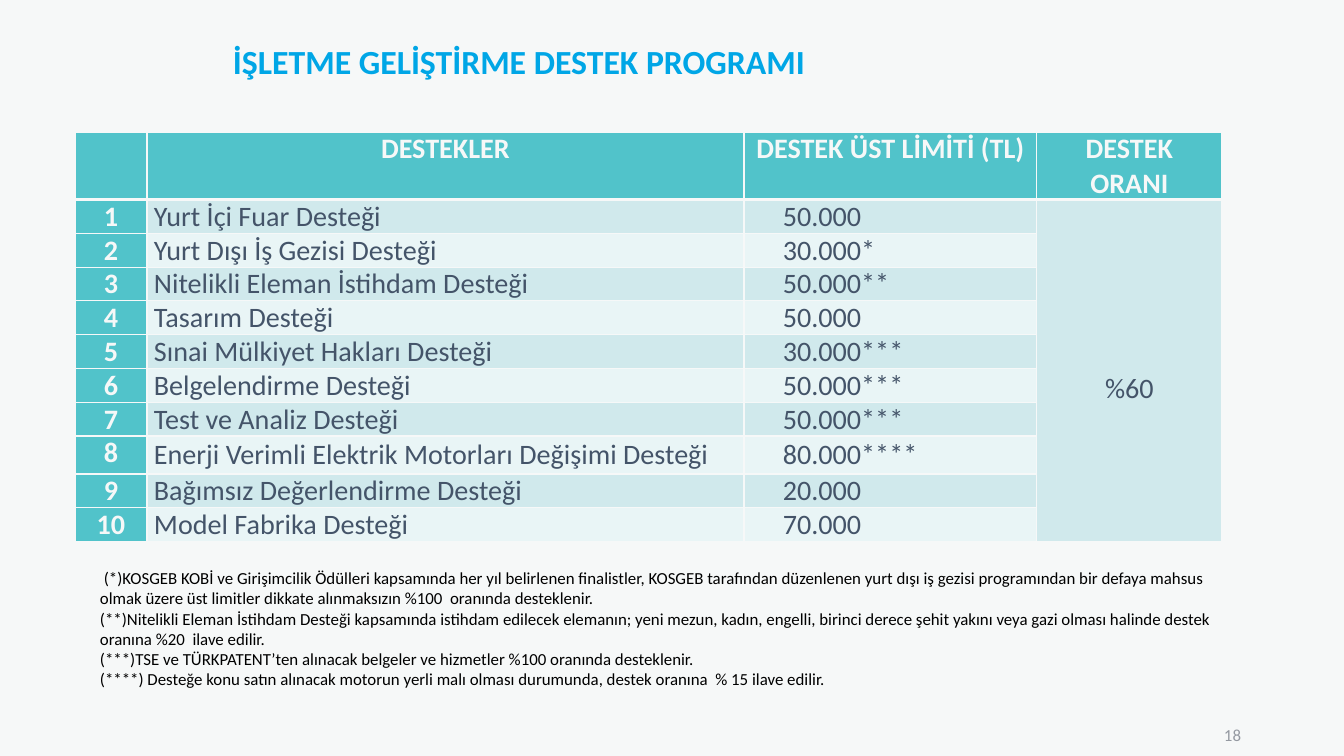
from dataclasses import dataclass

from lxml import etree
from pptx import Presentation
from pptx.dml.color import RGBColor
from pptx.enum.text import MSO_ANCHOR, PP_ALIGN
from pptx.oxml.ns import qn
from pptx.util import Pt

LEFT, CENTER, RIGHT = PP_ALIGN.LEFT, PP_ALIGN.CENTER, PP_ALIGN.RIGHT
TOP, MIDDLE = MSO_ANCHOR.TOP, MSO_ANCHOR.MIDDLE
EMU_PER_PX = 914400 / 101.2


def px(length):
    return round(length * EMU_PER_PX)


@dataclass(frozen=True)
class Theme:
    font: str = "Calibri"
    paper: str = "F6F8F8"
    accent: str = "51C3CA"
    band_dark: str = "D0E9EC"
    band_light: str = "E9F5F6"
    body: str = "445469"
    title: str = "00A6E6"
    note: str = "000000"
    page: str = "9499A1"
    title_size: int = 24
    table_size: int = 20
    note_size: int = 12
    grid_line: int = 1
    header_line: int = 3


class SlideBuilder:
    def __init__(self, slide, theme):
        self.slide = slide
        self.theme = theme
        background = slide.background.fill
        background.solid()
        background.fore_color.rgb = RGBColor.from_string(theme.paper)

    def add_lines(self, frame, lines, size, color, bold=False, align=LEFT, first_indent=0):
        for index, line in enumerate(lines):
            paragraph = frame.paragraphs[0] if index == 0 else frame.add_paragraph()
            paragraph.alignment = align
            if index == 0 and first_indent:
                paragraph._p.get_or_add_pPr().set("indent", str(px(first_indent)))
            run = paragraph.add_run()
            run.text = line
            run.font.name = self.theme.font
            run.font.size = Pt(size)
            run.font.bold = bold
            run.font.color.rgb = RGBColor.from_string(color)

    def text(self, box, lines, size, color, wrap=True, **style):
        frame = self.slide.shapes.add_textbox(*map(px, box)).text_frame
        frame.word_wrap = wrap
        frame.vertical_anchor = MIDDLE
        self.add_lines(frame, lines, size, color, **style)

    def borders(self, cell, **widths):
        """Draw the four sides of a cell; widths names the sides that are not a grid line."""
        properties = cell._tc.get_or_add_tcPr()
        for side in "LRTB":
            width = widths.get(side, self.theme.grid_line)
            line = etree.SubElement(properties, qn(f"a:ln{side}"), w=str(Pt(width)))
            fill = etree.SubElement(line, qn("a:solidFill"))
            etree.SubElement(fill, qn("a:srgbClr"), val=self.theme.paper)

    def table(self, left, top, columns, rows, height):
        frame = self.slide.shapes.add_table(
            len(rows), len(columns), px(left), px(top), px(sum(columns)), px(height))
        for column, width in zip(frame.table.columns, columns):
            column.width = px(width)
        for row, row_height in zip(frame.table.rows, rows):
            row.height = px(row_height)
        frame.height = px(height)
        return frame.table

    def cell(self, cell, lines, fill, color, anchor=TOP, indent=0, drop=0, edges=None, **style):
        cell.margin_left = px(7 + indent)
        cell.margin_right = px(7)
        cell.margin_top = px(drop)
        cell.margin_bottom = 0
        cell.vertical_anchor = anchor
        self.borders(cell, **(edges or {}))
        cell.fill.solid()
        cell.fill.fore_color.rgb = RGBColor.from_string(fill)
        self.add_lines(cell.text_frame, lines, self.theme.table_size, color, **style)


TITLE = "İŞLETME GELİŞTİRME DESTEK PROGRAMI"
HEADINGS = [[], ["DESTEKLER"], ["DESTEK ÜST LİMİTİ (TL)"], ["DESTEK", "ORANI"]]
SUPPORTS = [
    ("Yurt İçi Fuar Desteği", "50.000"),
    ("Yurt Dışı İş Gezisi Desteği", "30.000*"),
    ("Nitelikli Eleman İstihdam Desteği", "50.000**"),
    ("Tasarım Desteği", "50.000"),
    ("Sınai Mülkiyet Hakları Desteği", "30.000***"),
    ("Belgelendirme Desteği", "50.000***"),
    ("Test ve Analiz Desteği", "50.000***"),
    ("Enerji Verimli Elektrik Motorları Değişimi Desteği", "80.000****"),
    ("Bağımsız Değerlendirme Desteği", "20.000"),
    ("Model Fabrika Desteği", "70.000"),
]
TALL_ROW = 8
NOTES = [
    "(*)KOSGEB KOBİ ve Girişimcilik Ödülleri kapsamında her yıl belirlenen finalistler, "
    "KOSGEB tarafından düzenlenen yurt dışı iş gezisi programından bir defaya mahsus "
    "olmak üzere üst limitler dikkate alınmaksızın %100  oranında desteklenir.",
    "(**)Nitelikli Eleman İstihdam Desteği kapsamında istihdam edilecek elemanın; yeni mezun, "
    "kadın, engelli, birinci derece şehit yakını veya gazi olması halinde destek "
    "oranına %20  ilave edilir.",
    "(***)TSE ve TÜRKPATENT’ten alınacak belgeler ve hizmetler %100 oranında desteklenir.",
    "(****) Desteğe konu satın alınacak motorun yerli malı olması durumunda, destek oranına  "
    "% 15 ilave edilir.",
]


def add_support_table(builder):
    theme = builder.theme
    row_heights = [62] + [38 if number == TALL_ROW else 29
                          for number in range(1, len(SUPPORTS) + 1)]
    table = builder.table(75, 132, [72, 597, 293, 185], row_heights, 409)
    heading = dict(fill=theme.accent, color=theme.paper, bold=True, align=CENTER)

    for column, lines in enumerate(HEADINGS):
        builder.cell(table.cell(0, column), lines, edges={"B": theme.header_line}, **heading)

    rate = table.cell(1, 3)
    rate.merge(table.cell(len(SUPPORTS), 3))
    for number, (support, limit) in enumerate(SUPPORTS, start=1):
        edges = {"T": theme.header_line} if number == 1 else {}
        band = dict(fill=theme.band_dark if number % 2 else theme.band_light,
                    color=theme.body, edges=edges,
                    anchor=MIDDLE if number == TALL_ROW else TOP)
        builder.cell(table.cell(number, 0), [str(number)], edges=edges, **heading)
        builder.cell(table.cell(number, 1), [support], **band)
        builder.cell(table.cell(number, 2), [limit], indent=32, **band)
        if number > 1:
            builder.cell(table.cell(number, 3), [], theme.band_dark, theme.body)
    builder.cell(rate, ["%60"], theme.band_dark, theme.body, anchor=MIDDLE, drop=36,
                 edges={"T": theme.header_line}, align=CENTER)


def main():
    presentation = Presentation()
    presentation.slide_width, presentation.slide_height = px(1344), px(756)
    theme = Theme()
    builder = SlideBuilder(presentation.slides.add_slide(presentation.slide_layouts[6]), theme)
    builder.text((937, 714, 314, 41), ["18"], theme.note_size, theme.page, align=RIGHT)
    add_support_table(builder)
    builder.text((90, 562, 1134, 133), NOTES, theme.note_size, theme.note, first_indent=4)
    builder.text((221, 36, 596, 51), [TITLE], theme.title_size, theme.title,
                 wrap=False, bold=True, align=CENTER)
    presentation.save("out.pptx")


if __name__ == "__main__":
    main()
